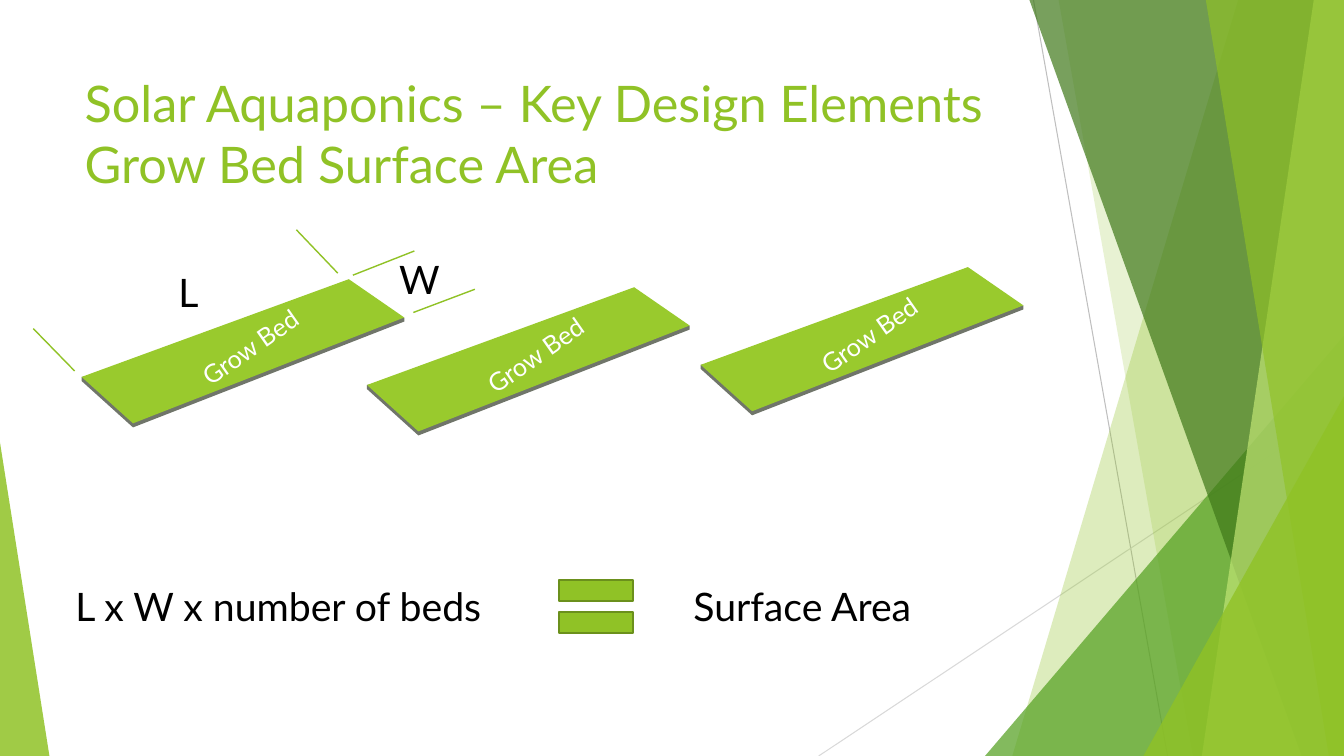
from pptx import Presentation
from pptx.dml.color import RGBColor
from pptx.enum.shapes import MSO_CONNECTOR, MSO_SHAPE
from pptx.enum.text import MSO_ANCHOR, MSO_AUTO_SIZE, PP_ALIGN
from pptx.oxml.ns import qn
from pptx.util import Inches, Pt
from lxml import etree

FONT = "Lato"
GREEN = RGBColor(0x90, 0xC2, 0x26)
LEAF = RGBColor(0x54, 0xA0, 0x21)
FOREST = RGBColor(0x3F, 0x78, 0x19)
LIME = RGBColor(0xC0, 0xE4, 0x74)
BED_TOP = RGBColor(0x99, 0xCA, 0x2D)
BED_SIDE = RGBColor(0x70, 0x75, 0x6A)
OUTLINE = RGBColor(0x6B, 0x90, 0x1C)
GRAY = RGBColor(0xBF, 0xBF, 0xBF)
LIGHT_GRAY = RGBColor(0xD9, 0xD9, 0xD9)
BLACK = RGBColor(0, 0, 0)
WHITE = RGBColor(0xFF, 0xFF, 0xFF)

WIDTH, HEIGHT = 13.33, 7.5
TITLE = "Solar Aquaponics – Key Design Elements\vGrow Bed Surface Area"

# start, end, colour, weight
HAIRLINES = [
    ((10.25, 0), (11.58, 7.5), GRAY, 0.75),
    ((13.33, 4.03), (8.12, 7.5), LIGHT_GRAY, 0.75),
]
DIMENSION_LINES = [
    ((3.5, 2.73), (4.11, 2.49), GREEN, 1),
    ((4.1, 3.1), (4.71, 2.87), GREEN, 1),
    ((0.74, 3.68), (0.33, 3.26), GREEN, 1),
    ((3.35, 2.71), (2.94, 2.28), GREEN, 1),
]
# Bands reach the right edge: (top x, bottom x, colour, opacity %).
# Triangles stand on the bottom edge: (left, top, width, apex, colour, opacity %).
BACKDROP = [
    ("band", 12.28, 10.04, GREEN, 30),
    ("band", 10.5, 11.83, GREEN, 20),
    ("triangle", 9.77, 3.33, 3.56, 1, LEAF, 72),
    ("band", 10.21, 12.91, FOREST, 70),
    ("band", 13.03, 11.92, LIME, 70),
    ("band", 11.96, 13.18, GREEN, 65),
    ("triangle", 11.34, 3.93, 1.99, 1, GREEN, 80),
    ("triangle", 0, 4.39, 0.49, 0, GREEN, 85),
]

# Left corner of each bed; the outline is relative to it
BEDS = [(0.81, 3.74), (3.64, 3.82), (6.95, 3.62)]
BED_CORNERS = [(0, 0), (2.65, -0.97), (3.2, -0.59), (0.51, 0.46)]
BED_DEPTH = 0.04
BED_LABEL_CENTER = (1.67, -0.3)
BED_LABEL_SIZE = (1.5, 0.4)

# text, left, top, width
LABELS = [
    ("Surface Area", 6.78, 5.73, 3.46),
    ("W", 3.86, 2.48, 0.63),
    ("L", 1.67, 2.61, 0.63),
    ("L x W x number of beds", 0.65, 5.73, 4.39),
]


def paint(shape, color, opacity=100):
    shape.shadow.inherit = False
    shape.fill.solid()
    shape.fill.fore_color.rgb = color
    shape.line.fill.background()
    if opacity < 100:
        tint = shape.element.spPr.find(qn("a:solidFill"))[0]
        etree.SubElement(tint, qn("a:alpha")).set("val", str(opacity * 1000))


def add_polygon(page, points, color, opacity=100):
    corners = [(Inches(x), Inches(y)) for x, y in points]
    builder = page.shapes.build_freeform(*corners[0])
    builder.add_line_segments(corners[1:], close=True)
    paint(builder.convert_to_shape(), color, opacity)


def add_band(page, top_x, bottom_x, color, opacity):
    points = [(top_x, 0), (WIDTH, 0), (WIDTH, HEIGHT), (bottom_x, HEIGHT)]
    add_polygon(page, points, color, opacity)


def add_triangle(page, left, top, width, apex, color, opacity):
    triangle = page.shapes.add_shape(
        MSO_SHAPE.ISOSCELES_TRIANGLE, Inches(left), Inches(top),
        Inches(width), Inches(HEIGHT - top))
    triangle.adjustments[0] = apex
    paint(triangle, color, opacity)


def add_line(page, start, end, color, weight):
    line = page.shapes.add_connector(
        MSO_CONNECTOR.STRAIGHT, *(Inches(v) for v in start + end))
    line.line.color.rgb = color
    line.line.width = Pt(weight)
    etree.SubElement(line.element.spPr, qn("a:effectLst"))


def write(box, text, size, color, align=PP_ALIGN.LEFT, anchor=MSO_ANCHOR.TOP):
    frame = box.text_frame
    frame.text = text
    frame.word_wrap = True
    frame.auto_size = MSO_AUTO_SIZE.NONE
    frame.vertical_anchor = anchor
    para = frame.paragraphs[0]
    para.alignment = align
    for span in para.runs:
        span.font.name = FONT
        span.font.size = Pt(size)
        span.font.color.rgb = color


def add_text(page, text, left, top, width, height, **style):
    box = page.shapes.add_textbox(
        Inches(left), Inches(top), Inches(width), Inches(height))
    write(box, text, **style)
    return box


def add_bed(page, left, top):
    face = [(left + x, top + y) for x, y in BED_CORNERS]
    lowered = [(x, y + BED_DEPTH) for x, y in face]
    add_polygon(page, [face[0], face[2], *lowered[2:], lowered[0]], BED_SIDE)
    add_polygon(page, face, BED_TOP)
    width, height = BED_LABEL_SIZE
    label = add_text(
        page, "Grow Bed", left + BED_LABEL_CENTER[0] - width / 2,
        top + BED_LABEL_CENTER[1] - height / 2, width, height,
        size=18, color=WHITE, align=PP_ALIGN.CENTER, anchor=MSO_ANCHOR.MIDDLE)
    label.rotation = -35


def main():
    deck = Presentation()
    deck.slide_width, deck.slide_height = Inches(WIDTH), Inches(HEIGHT)
    page = deck.slides.add_slide(deck.slide_layouts[5])

    for hairline in HAIRLINES:
        add_line(page, *hairline)
    draw = {"band": add_band, "triangle": add_triangle}
    for kind, *details in BACKDROP:
        draw[kind](page, *details)

    title = page.shapes.title
    title.left, title.top = Inches(0.74), Inches(0.67)
    title.width, title.height = Inches(9.4), Inches(1.44)
    write(title, TITLE, size=36, color=GREEN)

    for left, top in BEDS:
        add_bed(page, left, top)
    for dimension in DIMENSION_LINES:
        add_line(page, *dimension)
    for text, left, top, width in LABELS:
        add_text(page, text, left, top, width, 0.57, size=28, color=BLACK)

    equals = page.shapes.add_shape(
        MSO_SHAPE.MATH_EQUAL, Inches(5.41), Inches(5.57), Inches(1), Inches(0.89))
    paint(equals, GREEN)
    equals.line.color.rgb = OUTLINE
    equals.line.width = Pt(1.5)

    deck.save("out.pptx")


if __name__ == "__main__":
    main()
